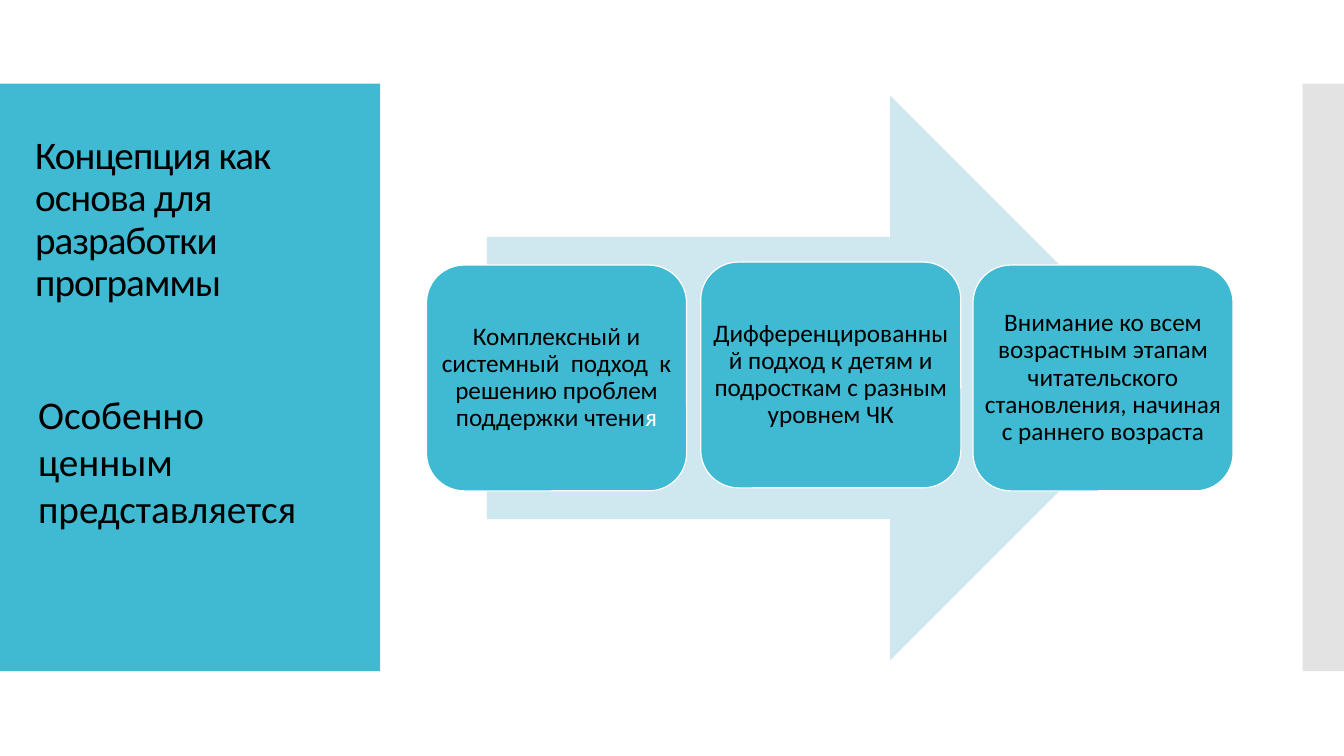
import pptx
import pptx.util
from pptx.dml.color import RGBColor
from pptx.enum.shapes import MSO_SHAPE
from pptx.enum.text import MSO_ANCHOR, PP_ALIGN

PX = 9144  # EMU per px, 100 px to the inch
TEAL = RGBColor(0x40, 0xBA, 0xD2)
PALE = RGBColor(0xCF, 0xE7, 0xEE)
GREY = RGBColor(0xE3, 0xE3, 0xE3)
BLACK = RGBColor(0, 0, 0)
WHITE = RGBColor(0xFF, 0xFF, 0xFF)
FONT = "Calibri"

CARD_W, CARD_H = 258, 224
CARDS = [
    (423, 263, "Комплексный и системный  подход  к решению проблем поддержки чтени"),
    (695, 260, "Дифференцированный подход к детям и подросткам с разным уровнем ЧК"),
    (965, 263, "Внимание ко всем возрастным этапам читательского становления, начиная с раннего возраста"),
]


def px(*values):
    return [v * PX for v in values]


def style_run(r, size, color=BLACK):
    r.font.name = FONT
    r.font.size = pptx.util.Pt(size)
    r.font.color.rgb = color


def add_block(s, kind, box, fill, line=None):
    sp = s.shapes.add_shape(kind, *px(*box))
    sp.shadow.inherit = False
    sp.fill.solid()
    sp.fill.fore_color.rgb = fill
    if line is None:
        sp.line.fill.background()
    else:
        sp.line.color.rgb = line
        sp.line.width = pptx.util.Pt(0.85)
    return sp


def add_card(s, left, top, text):
    sp = add_block(s, MSO_SHAPE.ROUNDED_RECTANGLE,
                   (left, top, CARD_W, CARD_H), TEAL, WHITE)
    tf = sp.text_frame
    tf.word_wrap = True
    tf.vertical_anchor = MSO_ANCHOR.MIDDLE
    # The rounded corners already inset the text
    tf.margin_left = tf.margin_right = tf.margin_top = tf.margin_bottom = 0
    p = tf.paragraphs[0]
    p.text = text
    p.alignment = PP_ALIGN.CENTER
    p.line_spacing = 0.9
    style_run(p.runs[0], 18)
    return p


def add_label(s, box, text, size, spacing=1.0):
    tf = s.shapes.add_textbox(*px(*box)).text_frame
    tf.word_wrap = True
    tf.text = text
    p = tf.paragraphs[0]
    p.line_spacing = spacing
    style_run(p.runs[0], size)
    return p.runs[0]


def main():
    prs = pptx.Presentation()
    prs.slide_width, prs.slide_height = px(1333, 750)
    s = prs.slides.add_slide(prs.slide_layouts[6])

    # Side panels
    add_block(s, MSO_SHAPE.RECTANGLE, (0, 83, 377, 583), TEAL)
    add_block(s, MSO_SHAPE.RECTANGLE, (1292, 83, 41, 583), GREY)

    # Title and lead-in
    r = add_label(s, (25, 130, 310, 190),
                  "Концепция как основа для разработки программы", 27.9, 0.9)
    r.font._element.set("spc", "-60")
    add_label(s, (28, 382, 310, 254), "Особенно ценным представляется", 28)

    # Arrow with the three cards
    add_block(s, MSO_SHAPE.RIGHT_ARROW, (483, 95, 680, 560), PALE)
    paragraphs = [add_card(s, *card) for card in CARDS]

    # Last letter of the first card is white
    r = paragraphs[0].add_run()
    r.text = "я"
    style_run(r, 18, WHITE)

    prs.save("out.pptx")


if __name__ == "__main__":
    main()
